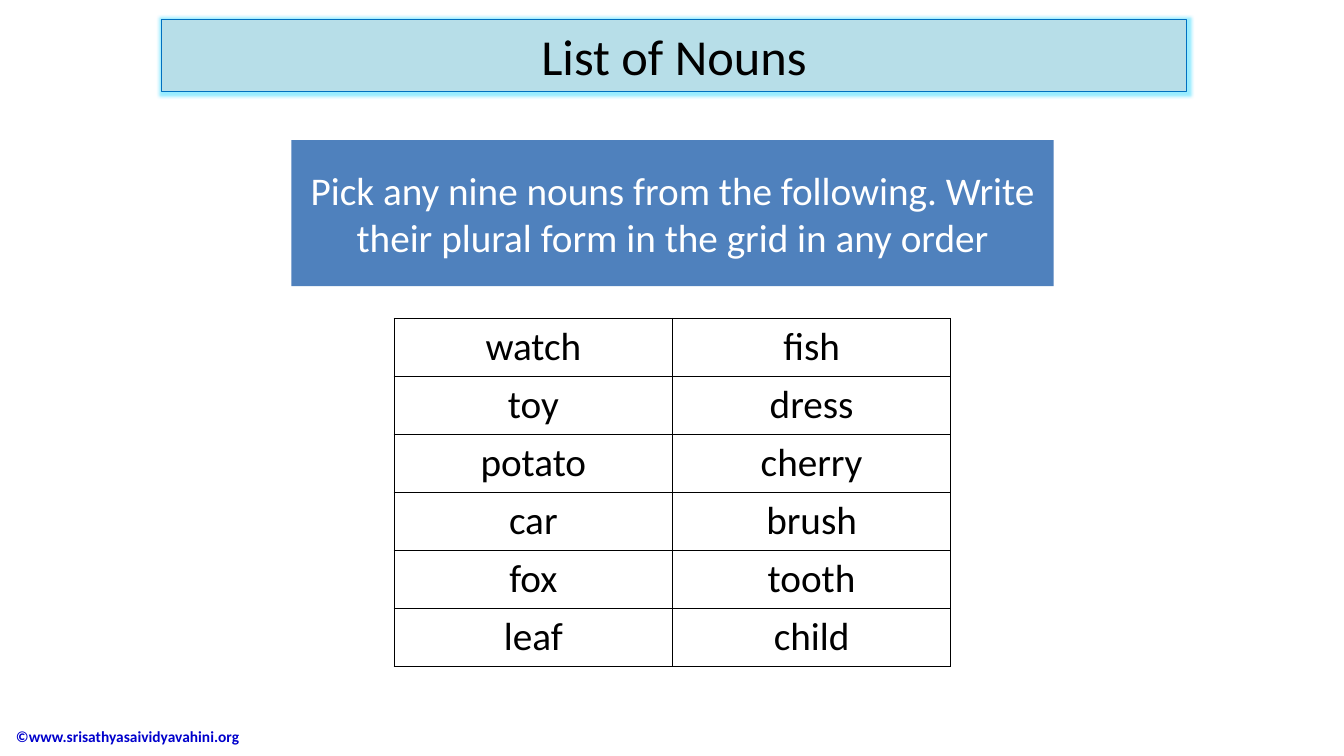
from lxml import etree
from pptx import Presentation
from pptx import util as u
from pptx.dml.color import RGBColor
from pptx.enum import shapes, text
from pptx.oxml import ns

BLACK = RGBColor(0x00, 0x00, 0x00)
WHITE = RGBColor(0xFF, 0xFF, 0xFF)
PALE = RGBColor(0xB7, 0xDE, 0xE8)
EDGE = RGBColor(0x00, 0x70, 0xC0)
BLUE = RGBColor(0x4F, 0x81, 0xBD)
NAVY = RGBColor(0x00, 0x00, 0xCC)
GLOW = RGBColor(0x00, 0xD0, 0xFF)

NOUNS = [
    ("watch", "fish"),
    ("toy", "dress"),
    ("potato", "cherry"),
    ("car", "brush"),
    ("fox", "tooth"),
    ("leaf", "child"),
]


def write(frame, words, size, color, align=text.PP_ALIGN.CENTER):
    frame.text = words
    line = frame.paragraphs[0]
    line.alignment = align
    line.font.name = "Calibri"
    line.font.size = u.Pt(size)
    line.font.color.rgb = color
    return line


def add(parent, tag, **attrs):
    """Append a DrawingML element to parent."""
    return etree.SubElement(parent, ns.qn(tag), **attrs)


deck = Presentation()
deck.slide_width = u.Inches(13.33)
deck.slide_height = u.Inches(7.5)
slide = deck.slides.add_slide(deck.slide_layouts[5])

# Title bar with a soft glow
title = slide.shapes.title
title.left, title.top = u.Inches(1.6), u.Inches(0.19)
title.width, title.height = u.Inches(10.17), u.Inches(0.72)
title.fill.solid()
title.fill.fore_color.rgb = PALE
title.line.color.rgb = EDGE
title.line.width = u.Pt(0.75)
glow = add(add(title._element.spPr, "a:effectLst"), "a:glow", rad="63500")
tint = add(glow, "a:srgbClr", val=str(GLOW))
add(tint, "a:alpha", val="40000")
write(title.text_frame, "List of Nouns", 36, BLACK)

# Task
task = slide.shapes.add_shape(
    shapes.MSO_SHAPE.RECTANGLE,
    u.Inches(2.89), u.Inches(1.39), u.Inches(7.56), u.Inches(1.45))
task.shadow.inherit = False
task.fill.solid()
task.fill.fore_color.rgb = BLUE
task.line.fill.background()
task.text_frame.word_wrap = True
task.text_frame.vertical_anchor = text.MSO_ANCHOR.MIDDLE
write(task.text_frame,
      "Pick any nine nouns from the following. "
      "Write their plural form in the grid in any order", 28, WHITE)

# Nouns
grid = slide.shapes.add_table(
    len(NOUNS), 2,
    u.Inches(3.91), u.Inches(3.16), u.Inches(5.52), u.Inches(3.45)).table
grid.first_row = False
grid.horz_banding = False
for row, pair in enumerate(NOUNS):
    for col, noun in enumerate(pair):
        cell = grid.cell(row, col)
        cell.vertical_anchor = text.MSO_ANCHOR.MIDDLE
        cell.margin_left = cell.margin_right = u.Inches(0.06)
        cell.margin_top = cell.margin_bottom = u.Inches(0.05)
        write(cell.text_frame, noun, 28, BLACK)
        props = cell._tc.get_or_add_tcPr()
        for side in ("a:lnL", "a:lnR", "a:lnT", "a:lnB"):
            edge = add(props, side, w=str(u.Pt(1)))
            add(add(edge, "a:solidFill"), "a:srgbClr", val=str(BLACK))
        cell.fill.background()

# Copyright line
credit = slide.shapes.add_textbox(
    u.Inches(0.06), u.Inches(7.1), u.Inches(3.53), u.Inches(0.41))
credit.text_frame.word_wrap = True
credit.text_frame.vertical_anchor = text.MSO_ANCHOR.MIDDLE
line = write(credit.text_frame, "©www.srisathyasaividyavahini.org", 11, NAVY,
             text.PP_ALIGN.LEFT)
line.font.bold = True

deck.save("out.pptx")
